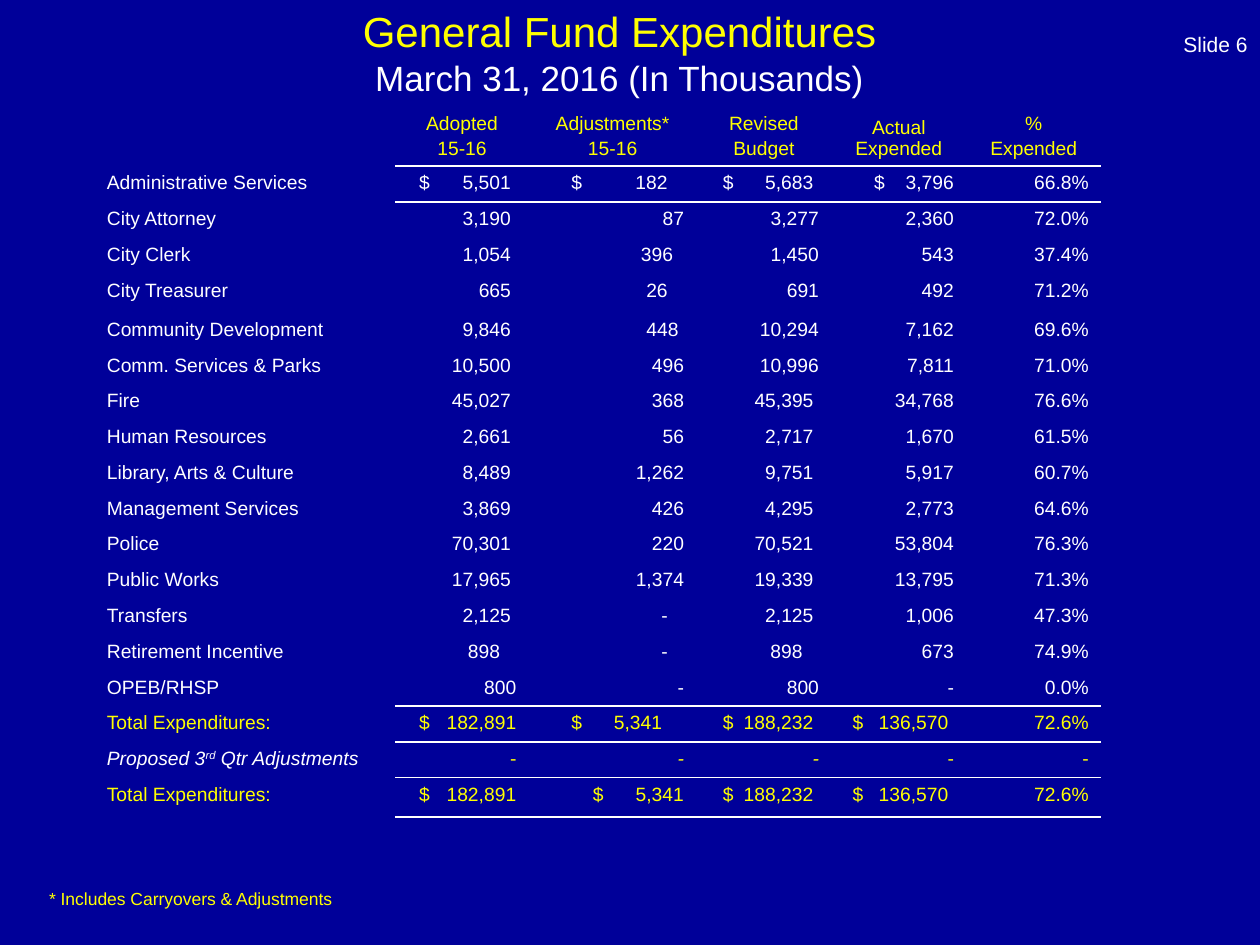
from lxml import etree
from pptx import Presentation
from pptx.dml.color import RGBColor
from pptx.enum import text as t
from pptx.oxml import ns
from pptx.util import Cm, Pt

NAVY = RGBColor(0x00, 0x00, 0x99)
YELLOW = RGBColor(0xFF, 0xFF, 0x00)
WHITE = RGBColor(0xFF, 0xFF, 0xFF)
LEFT, CENTER, RIGHT = t.PP_ALIGN.LEFT, t.PP_ALIGN.CENTER, t.PP_ALIGN.RIGHT
INSET = 0.25  # side margin of a cell, cm
SPACE = 0.11  # width of one figure shift, cm


def write(paragraph, text, size=11, color=WHITE, align=LEFT, italic=False, raised=False):
    paragraph.alignment = align
    run = paragraph.add_run()
    run.text = text
    run.font.name = "Arial"
    run.font.size = Pt(size)
    run.font.color.rgb = color
    run.font.italic = italic
    if raised:
        run._r.get_or_add_rPr().set("baseline", "30000")


def add_border(cell, side):
    line = etree.Element(ns.qn(f"a:{side}"), w=str(Pt(1)))
    fill = etree.SubElement(line, ns.qn("a:solidFill"))
    etree.SubElement(fill, ns.qn("a:srgbClr"), val=str(WHITE))
    cell._tc.get_or_add_tcPr().insert(0, line)


presentation = Presentation()
presentation.slide_width, presentation.slide_height = Cm(25.4), Cm(19.05)
slide = presentation.slides.add_slide(presentation.slide_layouts[5])
slide.background.fill.solid()
slide.background.fill.fore_color.rgb = NAVY

# Slide label
label = slide.shapes.add_textbox(Cm(19.48), Cm(0), Cm(5.92), Cm(1.27)).text_frame
label.word_wrap = True
label.vertical_anchor = t.MSO_ANCHOR.BOTTOM
write(label.paragraphs[0], "Slide 6", size=12, align=RIGHT)

# Title
title = slide.shapes.title
title.left, title.top, title.width, title.height = Cm(0.64), Cm(0.2), Cm(23.7), Cm(1.7)
title.text_frame.vertical_anchor = t.MSO_ANCHOR.MIDDLE
heading = title.text_frame.paragraphs[0]
write(heading, "General Fund Expenditures", size=24, color=YELLOW, align=CENTER)
heading.add_line_break()
write(heading, "March 31, 2016 (In Thousands)", size=20, align=CENTER)

# Expenditure figures: label, values, shift of each value from the right in spaces
headers = [["Adopted", "15-16"], ["Adjustments*", "15-16"], ["Revised", "Budget"],
           ["Actual Expended"], ["%", "Expended"]]
rows = [
    ("Administrative Services", ["5,501", "182", "5,683", "3,796", "66.8%"], (1, 3, 1, 0, 0)),
    ("City Attorney", ["3,190", "87", "3,277", "2,360", "72.0%"], (1, 0, 0, 0, 0)),
    ("City Clerk", ["1,054", "396", "1,450", "543", "37.4%"], (1, 2, 0, 0, 0)),
    ("City Treasurer", ["665", "26", "691", "492", "71.2%"], (1, 3, 0, 0, 0)),
    ("Community Development", ["9,846", "448", "10,294", "7,162", "69.6%"], (1, 1, 0, 0, 0)),
    ("Comm. Services & Parks", ["10,500", "496", "10,996", "7,811", "71.0%"], (1, 0, 0, 0, 0)),
    ("Fire", ["45,027", "368", "45,395", "34,768", "76.6%"], (1, 0, 1, 0, 0)),
    ("Human Resources", ["2,661", "56", "2,717", "1,670", "61.5%"], (1, 0, 1, 0, 0)),
    ("Library, Arts & Culture", ["8,489", "1,262", "9,751", "5,917", "60.7%"], (1, 0, 1, 0, 0)),
    ("Management Services", ["3,869", "426", "4,295", "2,773", "64.6%"], (1, 0, 1, 0, 0)),
    ("Police", ["70,301", "220", "70,521", "53,804", "76.3%"], (1, 0, 1, 0, 0)),
    ("Public Works", ["17,965", "1,374", "19,339", "13,795", "71.3%"], (1, 0, 1, 0, 0)),
    ("Transfers", ["2,125", "-", "2,125", "1,006", "47.3%"], (1, 3, 1, 0, 0)),
    ("Retirement Incentive", ["898", "-", "898", "673", "74.9%"], (3, 3, 3, 0, 0)),
    ("OPEB/RHSP", ["800", "-", "800", "-", "0.0%"], (0, 0, 0, 0, 0)),
    ("Total Expenditures:", ["182,891", "5,341", "188,232", "136,570", "72.6%"], (0, 4, 1, 1, 0)),
    ("Proposed 3rd Qtr Adjustments", ["-"] * 5, (0, 0, 0, 0, 0)),
    ("Total Expenditures:", ["182,891", "5,341", "188,232", "136,570", "72.6%"], (0, 0, 1, 1, 0)),
]
PROPOSED = 17
TOTALS = (16, 18)
RULED = (0, 15, 16, 17, 18)  # rows with a line below
# Left offset of the dollar sign in each money column, cm
dollar_offsets = {1: (0.48, 0.86, 0.53, 0.86),
                  16: (0.48, 0.86, 0.53, 0.43),
                  18: (0.48, 1.29, 0.53, 0.43)}

# Table frame
widths = [6.07, 2.69, 3.38, 2.72, 2.72, 2.72]
heights = [1.45] + [0.71] * 18
heights[4] = heights[18] = 0.79
table = slide.shapes.add_table(len(heights), len(widths), Cm(1.9), Cm(1.9),
                               Cm(sum(widths)), Cm(sum(heights))).table
table.first_row = table.horz_banding = False
style = table._tbl.tblPr.find(ns.qn("a:tableStyleId"))
style.text = "{2D5ABB26-0587-4C30-8999-92F81FD0307C}"  # no style, no grid
for column, width in zip(table.columns, widths):
    column.width = Cm(width)
for row, height in zip(table.rows, heights):
    row.height = Cm(height)
for r in range(len(heights)):
    for c in range(len(widths)):
        cell = table.cell(r, c)
        cell.fill.background()
        if c and r in RULED:
            add_border(cell, "lnB")
        if c and r - 1 in RULED:
            add_border(cell, "lnT")

# Header row
for c, lines in enumerate(headers, 1):
    cell = table.cell(0, c)
    cell.vertical_anchor = t.MSO_ANCHOR.BOTTOM
    for i, line in enumerate(lines):
        paragraph = cell.text_frame.add_paragraph() if i else cell.text_frame.paragraphs[0]
        if i:
            paragraph.space_before = Pt(2.2)
        write(paragraph, line, color=YELLOW, align=CENTER)

# Body rows
for r, (name, values, shifts) in enumerate(rows, 1):
    paragraph = table.cell(r, 0).text_frame.paragraphs[0]
    if r == PROPOSED:
        before, after = name.split("rd", 1)
        write(paragraph, before, italic=True)
        write(paragraph, "rd", italic=True, raised=True)
        write(paragraph, after, italic=True)
    else:
        write(paragraph, name, color=YELLOW if r in TOTALS else WHITE)
    color = YELLOW if r >= TOTALS[0] else WHITE
    offsets = dollar_offsets.get(r, ())
    for c, (value, shift) in enumerate(zip(values, shifts), 1):
        cell = table.cell(r, c)
        paragraph = cell.text_frame.paragraphs[0]
        right = INSET + shift * SPACE
        if c <= len(offsets):
            # Dollar sign at the left, amount on a right tab
            offset = offsets[c - 1]
            cell.margin_left, cell.margin_right = Cm(offset), Cm(0)
            tabs = etree.SubElement(paragraph._p.get_or_add_pPr(), ns.qn("a:tabLst"))
            etree.SubElement(tabs, ns.qn("a:tab"),
                             pos=str(Cm(widths[c] - right - offset)), algn="r")
            write(paragraph, "$\t" + value, color=color)
        else:
            cell.margin_right = Cm(right)
            write(paragraph, value, color=color, align=RIGHT,
                  italic=r == PROPOSED and c in (2, 3))

# Footnote
footnote = slide.shapes.add_textbox(Cm(0.64), Cm(17.78), Cm(8.69), Cm(0.69)).text_frame
footnote.word_wrap = True
footnote.margin_left = Cm(0.35)
write(footnote.paragraphs[0], "* Includes Carryovers & Adjustments", size=10, color=YELLOW)

presentation.save("out.pptx")
